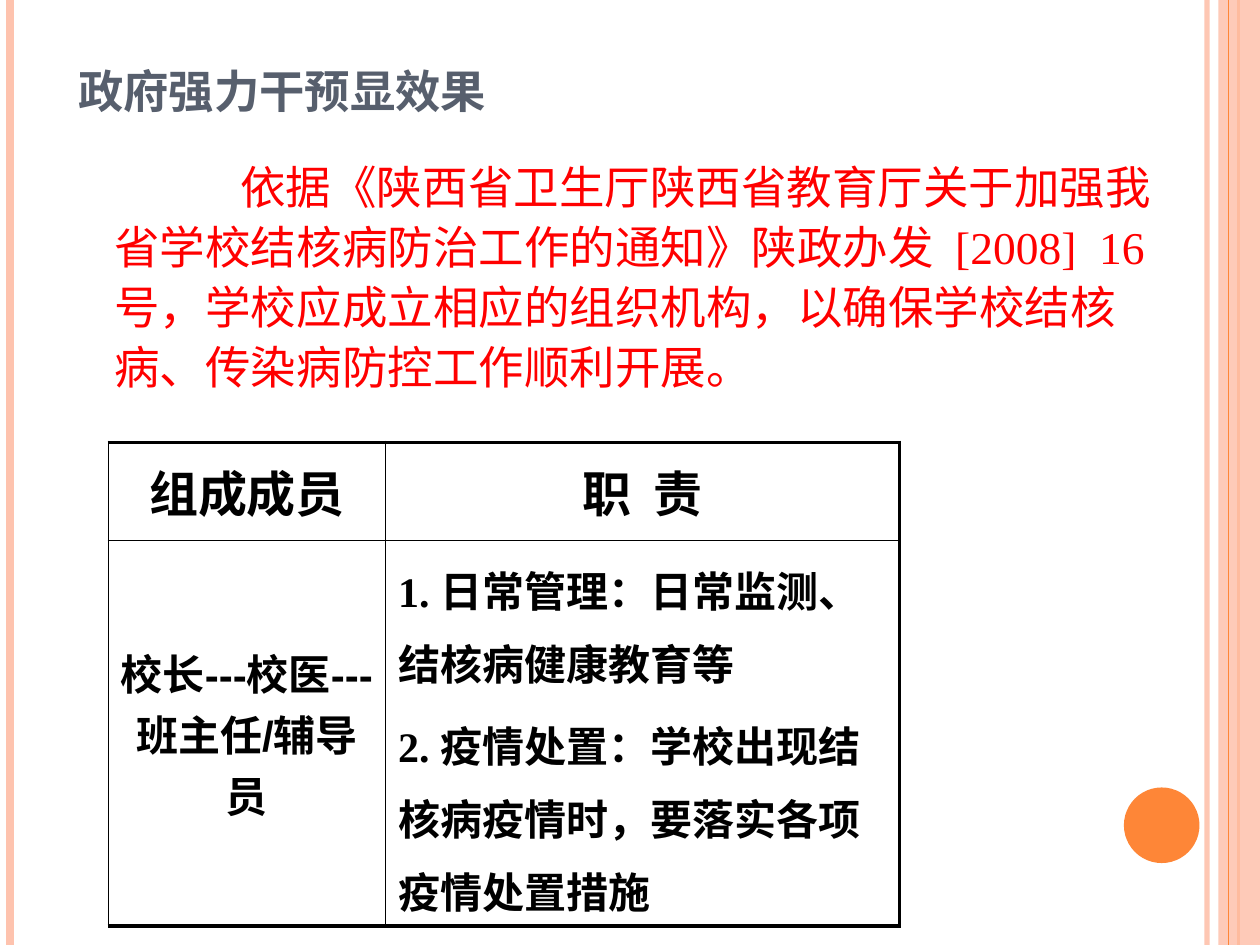
from lxml.etree import SubElement as Sub
from pptx import Presentation
from pptx.dml.color import RGBColor
from pptx.enum.shapes import MSO_CONNECTOR as Conn, MSO_SHAPE as Shape
from pptx.enum.text import MSO_ANCHOR as Anchor, MSO_AUTO_SIZE as Fit, PP_ALIGN as Align
from pptx.oxml.ns import qn
from pptx.util import Inches, Pt

PEACH = RGBColor(0xFE, 0xC3, 0xAE)
ORANGE = RGBColor(0xFE, 0x86, 0x37)
SLATE = RGBColor(0x57, 0x5F, 0x6D)
RED = RGBColor(0xFF, 0x00, 0x00)
BLACK = RGBColor(0x00, 0x00, 0x00)
SANS, CJK, SERIF = "Arial", "Noto Sans CJK SC", "Times New Roman"

TITLE = "政府强力干预显效果"
BODY = ("依据《陕西省卫生厅陕西省教育厅关于加强我省学校结核病防治工作的通知》陕政办发  [2008]  16号，"
        "学校应成立相应的组织机构，以确保学校结核病、传染病防控工作顺利开展。")
HEADS = ["组成成员", "职  责"]
STAFF = "校长---校医---班主任/辅导员"
DUTIES = ["1. 日常管理：日常监测、结核病健康教育等",
          "2. 疫情处置：学校出现结核病疫情时，要落实各项疫情处置措施"]


def write(frame, *texts, size, font, color=BLACK, bold=False, align=Align.LEFT,
          space=None, gap=0, indent=None, small=False):
    """Fill a text frame with formatted paragraphs."""
    frame.word_wrap = True
    for i, text in enumerate(texts):
        para = frame.add_paragraph() if i else frame.paragraphs[0]
        para.alignment = align
        para.line_spacing = space
        para.space_before = Pt(gap if i else 0)
        if indent:
            props = para._p.get_or_add_pPr()
            props.set("marL", str(Inches(indent[0])))
            props.set("indent", str(Inches(indent[1])))
        run = para.add_run()
        run.text = text
        run.font.size = Pt(size)
        run.font.name = font
        run.font.bold = bold
        run.font.color.rgb = color
        if small:
            props = run._r.get_or_add_rPr()
            props.set("cap", "small")
            Sub(props, qn("a:ea"), typeface=font)


def fade(fill, alpha):
    """Make a solid fill partly clear."""
    color = fill.find(".//" + qn("a:srgbClr"))
    Sub(color, qn("a:alpha"), val=str(alpha * 1000))


def rule(slide, x, color, width, alpha=100):
    """Draw a full-height vertical line."""
    line = slide.shapes.add_connector(Conn.STRAIGHT, Inches(x), 0, Inches(x), Inches(7.5))
    line.line.color.rgb = color
    line.line.width = Pt(width)
    props = line._element.spPr
    if alpha < 100:
        fade(props, alpha)
    Sub(props, qn("a:effectLst"))


def block(slide, kind, box, color, alpha=100):
    """Draw a filled shape without outline."""
    shape = slide.shapes.add_shape(kind, *map(Inches, box))
    shape.shadow.inherit = False
    shape.fill.solid()
    shape.fill.fore_color.rgb = color
    shape.line.fill.background()
    if alpha < 100:
        fade(shape._element.spPr, alpha)


def edge(cell, **widths):
    """Set black cell borders, widths in points by side."""
    props = cell._tc.get_or_add_tcPr()
    for i, (side, width) in enumerate(widths.items()):
        line = props.makeelement(qn("a:ln" + side), {"w": str(Pt(width))})
        Sub(Sub(line, qn("a:solidFill")), qn("a:srgbClr"), val=str(BLACK))
        props.insert(i, line)


def decor(slide):
    """Draw the side bars and the dot."""
    rule(slide, 9.58, PEACH, 3, 93)
    rule(slide, 0.08, PEACH, 4.5)
    rule(slide, 9.83, ORANGE, 1.5)
    block(slide, Shape.RECTANGLE, (9.67, 0, 0.33, 7.5), PEACH, 87)
    rule(slide, 9.75, ORANGE, 0.75)
    block(slide, Shape.OVAL, (8.92, 6.25, 0.6, 0.6), ORANGE)


def head(slide):
    """Place the title above the decoration."""
    title = slide.shapes.title
    slide.shapes._spTree.append(title._element)
    title.left, title.top, title.width, title.height = map(Inches, (0.52, 0.3, 8.14, 0.7))
    frame = title.text_frame
    frame.auto_size = Fit.NONE
    frame.vertical_anchor = Anchor.BOTTOM
    write(frame, TITLE, size=32.4, font=CJK, color=SLATE, bold=True, small=True)


def intro(slide):
    """Add the red paragraph."""
    box = slide.shapes.add_textbox(*map(Inches, (0.31, 1.17, 8.98, 2.12)))
    write(box.text_frame, BODY, size=26, font=SERIF, color=RED, space=1.1, indent=(0.5, 1))


def grid(slide):
    """Add the table of members and duties."""
    frame = slide.shapes.add_table(2, 2, *map(Inches, (0.86, 3.51, 6.28, 3.84)))
    table = frame.table
    for col, width in zip(table.columns, (2.2, 4.08)):
        col.width = Inches(width)
    for row, height in zip(table.rows, (0.78, 3.06)):
        row.height = Inches(height)
    for r in range(2):
        for c in range(2):
            cell = table.cell(r, c)
            cell.fill.background()
            cell.vertical_anchor = Anchor.MIDDLE
            edge(cell, L=1, R=2.25 if c else 1, T=1 if r else 2.25, B=2.25 if r else 1)
    for c, text in enumerate(HEADS):
        write(table.cell(0, c).text_frame, text, size=28, font=SANS, bold=True, align=Align.CENTER)
    write(table.cell(1, 0).text_frame, STAFF, size=24, font=SANS, bold=True, align=Align.CENTER)
    write(table.cell(1, 1).text_frame, *DUTIES, size=24, font=SERIF, bold=True, space=1.2, gap=4.8)


def main():
    """Build and save the slide."""
    deck = Presentation()
    deck.slide_width, deck.slide_height = Inches(10), Inches(7.5)
    slide = deck.slides.add_slide(deck.slide_layouts[5])
    decor(slide)
    head(slide)
    intro(slide)
    grid(slide)
    deck.save("out.pptx")


if __name__ == "__main__":
    main()
